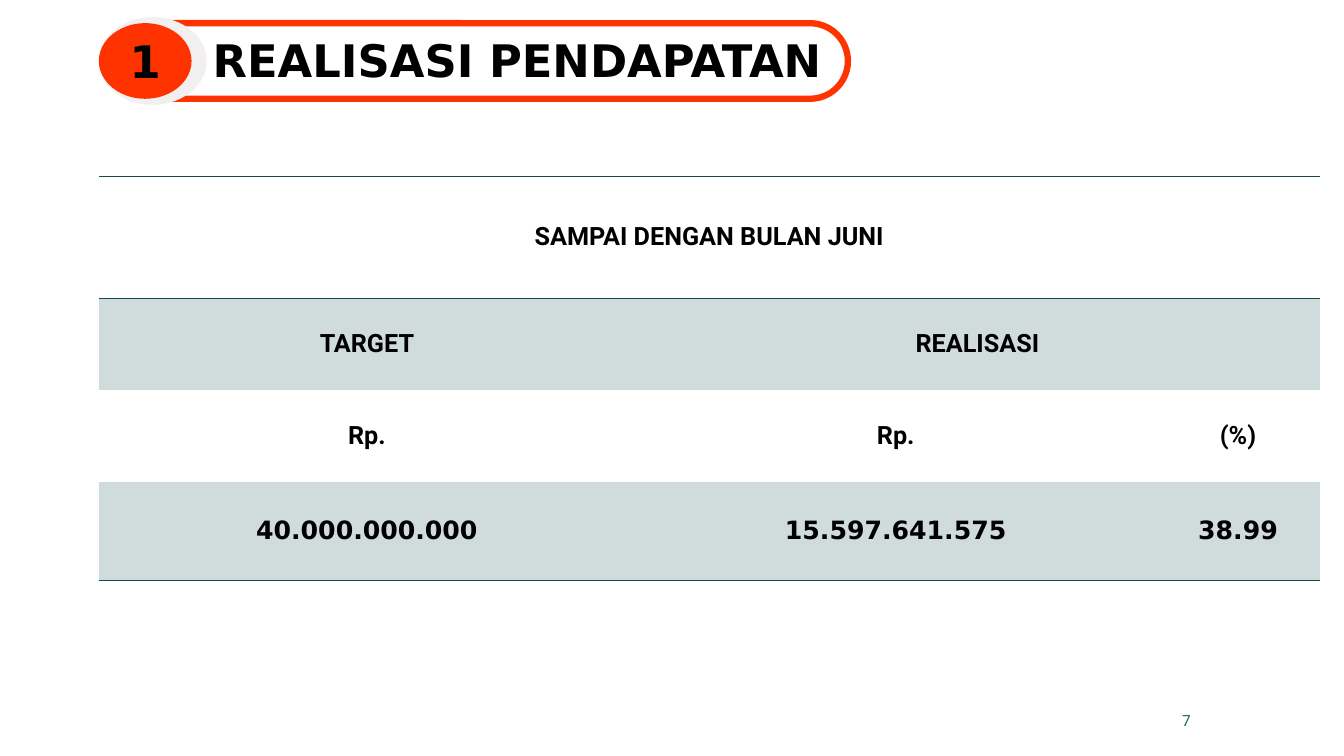
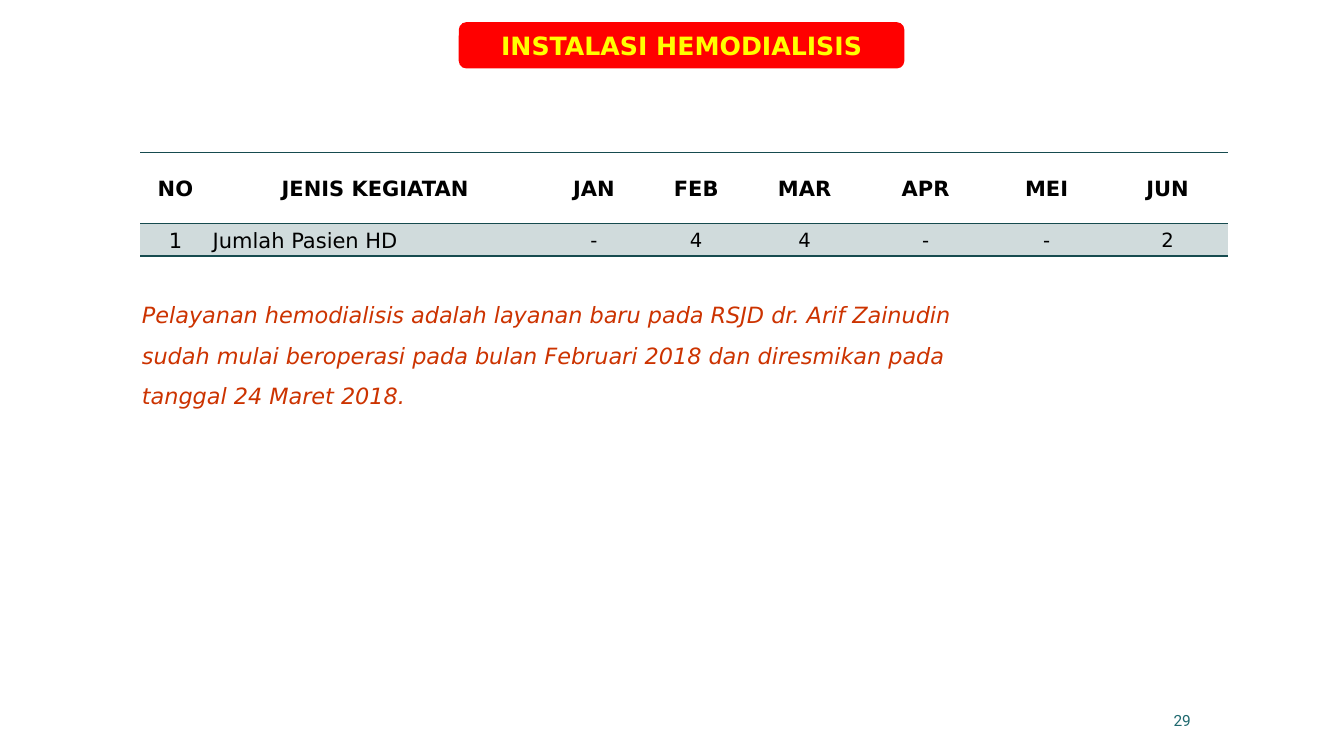
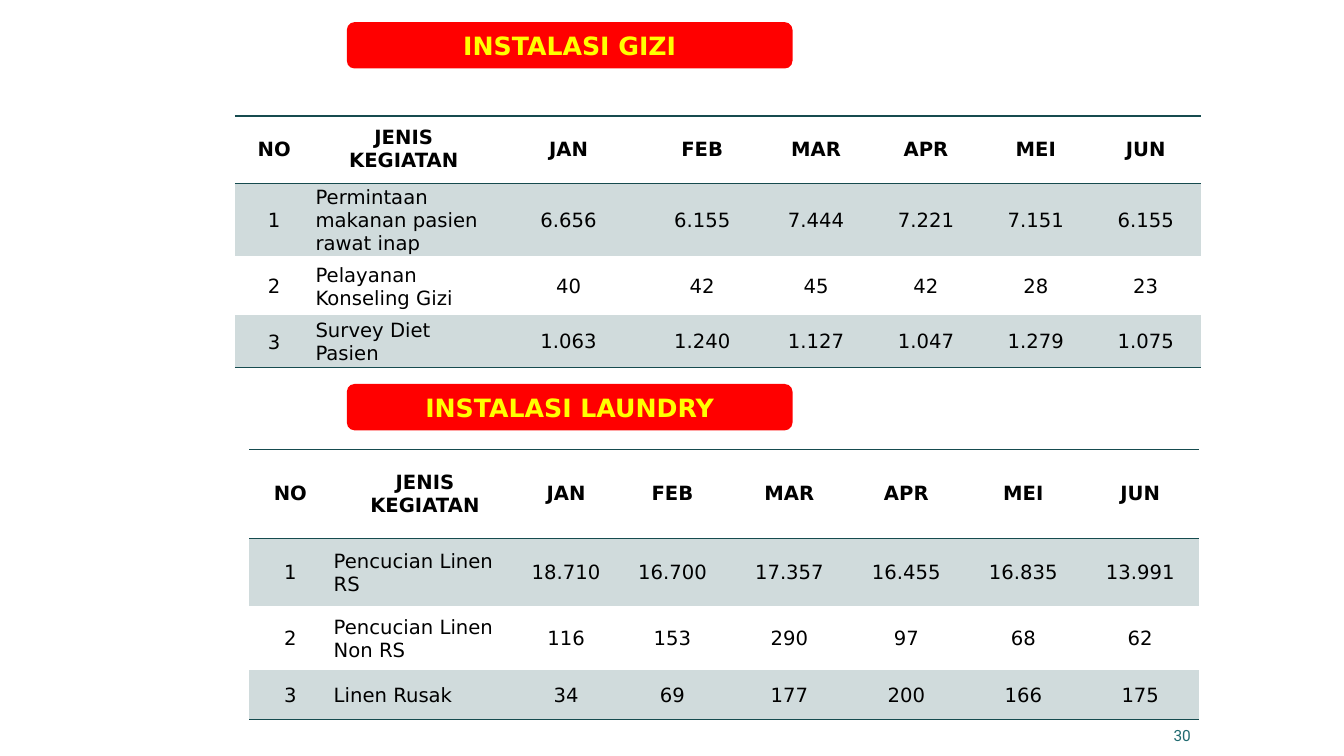
from lxml import etree
from pptx import Presentation
from pptx.dml.color import RGBColor
from pptx.enum.shapes import MSO_SHAPE
from pptx.enum.text import MSO_ANCHOR, MSO_AUTO_SIZE, PP_ALIGN
from pptx.oxml.ns import qn
from pptx.util import Inches, Pt

LEFT, CENTER, RIGHT = PP_ALIGN.LEFT, PP_ALIGN.CENTER, PP_ALIGN.RIGHT
MIDDLE, BOTTOM = MSO_ANCHOR.MIDDLE, MSO_ANCHOR.BOTTOM
ROUNDED, OVAL = MSO_SHAPE.ROUNDED_RECTANGLE, MSO_SHAPE.OVAL
TITLE_ONLY, BLANK = 5, 6

HEADING_FONT, BODY_FONT = "DejaVu Sans", "Roboto"
BLACK, TEAL, BAND, PAGE_TEAL = "000000", "164B4F", "D0DBDC", "1F696F"
ORANGE, PALE, RED, YELLOW, RUST = "FF3300", "F1EFF0", "FF0000", "FFFF00", "CC3300"
PLAIN_STYLE = "{2D5ABB26-0587-4C30-8999-92F81FD0307C}"

HEADERS = ["NO", "JENIS KEGIATAN", "JAN", "FEB", "MAR", "APR", "MEI", "JUN"]


def rgb(hex_color):
    return RGBColor.from_string(hex_color)


def box(left, top, width, height):
    return [Inches(length) for length in (left, top, width, height)]


def style_text(frame, size, color=BLACK, font=HEADING_FONT, align=CENTER,
               bold=False, italic=False, spacing=None):
    for paragraph in frame.paragraphs:
        paragraph.alignment = align
        if spacing:
            paragraph.line_spacing = spacing
        for run in paragraph.runs:
            run.font.name = font
            run.font.size = Pt(size)
            run.font.bold = bold
            run.font.italic = italic
            run.font.color.rgb = rgb(color)


def add_panel(shapes, kind, area, fill=None, outline=None):
    panel = shapes.add_shape(kind, *box(*area))
    panel.shadow.inherit = False
    if fill:
        panel.fill.solid()
        panel.fill.fore_color.rgb = rgb(fill)
    else:
        panel.fill.background()
    if outline:
        panel.line.color.rgb = rgb(outline)
        panel.line.width = Pt(4.5)
    else:
        panel.line.fill.background()
    return panel


def add_page_number(slide, number, top=6.95):
    frame = slide.shapes.add_textbox(*box(8.8, top, 3.11, 0.4)).text_frame
    frame.word_wrap = True
    frame.vertical_anchor = MIDDLE
    frame.text = str(number)
    style_text(frame, 11, PAGE_TEAL, BODY_FONT, RIGHT)


def add_section_label(slide, left, top, label):
    frame = add_panel(slide.shapes, ROUNDED, (left, top, 4.42, 0.46), RED).text_frame
    frame.vertical_anchor = MIDDLE
    frame.text = label
    style_text(frame, 18, YELLOW, bold=True)


def add_numbered_title(slide, left, top, number, title):
    group = slide.shapes.add_group_shape()
    pill = add_panel(group.shapes, ROUNDED, (left + 0.12, top + 0.06, 7.31, 0.75),
                     outline=ORANGE)
    pill.adjustments[0] = 0.5
    add_panel(group.shapes, OVAL, (left, top, 1.07, 0.87), PALE)
    badge = add_panel(group.shapes, OVAL, (left, top + 0.06, 0.92, 0.75), ORANGE)
    badge.text_frame.vertical_anchor = MIDDLE
    badge.text_frame.text = number
    style_text(badge.text_frame, 32, bold=True)

    heading = slide.shapes.title
    heading.left, heading.top, heading.width, heading.height = box(
        left - 0.15, top, 8.6, 0.75)
    frame = heading.text_frame
    frame.auto_size = MSO_AUTO_SIZE.NONE
    frame.vertical_anchor = BOTTOM
    frame.text = title
    style_text(frame, 32, bold=True, spacing=0.9)


def add_rule(cell, side):
    """Draw a thin teal line on one side of the cell: "lnT" or "lnB"."""
    rule = etree.Element(qn("a:" + side), w=str(Pt(1)))
    fill = etree.SubElement(rule, qn("a:solidFill"))
    etree.SubElement(fill, qn("a:srgbClr"), val=TEAL)
    cell._tc.get_or_add_tcPr().insert(0, rule)


def add_banded_table(slide, left, top, widths, heights):
    """Table with ruled header, shaded odd body rows and a closing rule."""
    table = slide.shapes.add_table(
        len(heights), len(widths),
        *box(left, top, sum(widths), sum(heights))).table
    table._tbl.tblPr.find(qn("a:tableStyleId")).text = PLAIN_STYLE
    table.first_row = table.horz_banding = False
    for column, width in zip(table.columns, widths):
        column.width = Inches(width)
    for index, (row, height) in enumerate(zip(table.rows, heights)):
        row.height = Inches(height)
        for cell in row.cells:
            if index % 2:
                cell.fill.solid()
                cell.fill.fore_color.rgb = rgb(BAND)
            else:
                cell.fill.background()
            if index in (0, len(heights) - 1):
                add_rule(cell, "lnB")
            if index == 0:
                add_rule(cell, "lnT")
    return table


def fill_cell(cell, text, margins, size, **style):
    cell.margin_left = cell.margin_right = Inches(margins[0])
    cell.margin_top, cell.margin_bottom = Inches(margins[1]), Inches(margins[2])
    cell.vertical_anchor = MIDDLE
    cell.text = text
    style_text(cell.text_frame, size, **style)


def add_activity_table(slide, left, top, widths, heights, activities,
                       header_margins, label_size=14):
    table = add_banded_table(slide, left, top, widths, heights)
    for cell, header in zip(table.rows[0].cells, HEADERS):
        fill_cell(cell, header, header_margins, label_size, bold=True)
    for number, activity in enumerate(activities, 1):
        for column, text in enumerate([str(number), *activity]):
            is_label = column < 2
            fill_cell(table.cell(number, column), text,
                      (0.02, 0.02, 0) if is_label else (0.01, 0.01, 0),
                      label_size if is_label else 14,
                      align=LEFT if column == 1 else CENTER)


def add_income_table(slide, left, top):
    table = add_banded_table(slide, left, top, [5.32, 5.17, 1.62],
                             [1.21, 0.91, 0.91, 0.98])
    table.cell(0, 0).merge(table.cell(0, 2))
    table.cell(1, 1).merge(table.cell(1, 2))
    rows = [
        ["SAMPAI DENGAN BULAN JUNI"],
        ["TARGET", "REALISASI"],
        ["Rp.", "Rp.", "(%)"],
        ["40.000.000.000", "15.597.641.575", "38.99"],
    ]
    for index, row in enumerate(rows):
        is_amount = index == len(rows) - 1
        for column, text in enumerate(row):
            margins = (0, 0, 0) if is_amount and column else (0.2, 0.08, 0.08)
            fill_cell(table.cell(index, column), text, margins, 18, bold=True,
                      font=HEADING_FONT if is_amount else BODY_FONT)


def add_note(slide, left, top, lines):
    frame = slide.shapes.add_textbox(*box(left, top, 8.5, 1.31)).text_frame
    frame.word_wrap = True
    frame.text = "\n".join(lines)
    style_text(frame, 16, RUST, align=LEFT, italic=True, spacing=1.5)


def new_slide(prs, layout):
    return prs.slides.add_slide(prs.slide_layouts[layout])


def build_income_slide(prs):
    slide = new_slide(prs, TITLE_ONLY)
    add_numbered_title(slide, 0.98, 0.17, "1", "REALISASI PENDAPATAN")
    add_income_table(slide, 0.98, 1.75)
    add_page_number(slide, 7)


def build_hemodialysis_slide(prs):
    slide = new_slide(prs, BLANK)
    add_section_label(slide, 4.55, 0.22, "INSTALASI HEMODIALISIS")
    add_activity_table(
        slide, 1.39, 1.51, [0.7, 3.26, 1.08, 0.95] + [1.2] * 4, [0.71, 0.32],
        [["Jumlah Pasien HD", "-", "4", "4", "-", "-", "2"]],
        (0.02, 0.02, 0), label_size=15)
    add_note(slide, 1.31, 2.81, [
        "Pelayanan hemodialisis adalah layanan baru pada RSJD dr. Arif Zainudin",
        "sudah mulai beroperasi pada bulan Februari 2018 dan diresmikan pada "
        "tanggal 24 Maret 2018.",
    ])
    add_page_number(slide, 29)


def build_nutrition_laundry_slide(prs):
    slide = new_slide(prs, BLANK)
    add_section_label(slide, 3.44, 0.22, "INSTALASI GIZI")
    add_activity_table(
        slide, 2.33, 1.15, [0.78, 1.79, 1.48, 1.17] + [1.09] * 4,
        [0.67, 0.55, 0.59, 0.52],
        [["Permintaan makanan pasien rawat inap",
          "6.656", "6.155", "7.444", "7.221", "7.151", "6.155"],
         ["Pelayanan Konseling Gizi", "40", "42", "45", "42", "28", "23"],
         ["Survey Diet Pasien",
          "1.063", "1.240", "1.127", "1.047", "1.279", "1.075"]],
        (0.2, 0.08, 0.08))
    add_section_label(slide, 3.44, 3.81, "INSTALASI LAUNDRY")
    add_activity_table(
        slide, 2.47, 4.46, [0.82, 1.85, 0.95] + [1.16] * 5,
        [0.88, 0.67, 0.64, 0.49],
        [["Pencucian Linen RS",
          "18.710", "16.700", "17.357", "16.455", "16.835", "13.991"],
         ["Pencucian Linen Non RS", "116", "153", "290", "97", "68", "62"],
         ["Linen Rusak", "34", "69", "177", "200", "166", "175"]],
        (0.2, 0.07, 0.07))
    # The laundry table reaches 7.14 inches, so the number sits just below it.
    add_page_number(slide, 30, top=7.1)


def main():
    prs = Presentation()
    prs.slide_width, prs.slide_height = Inches(13.33), Inches(7.5)
    build_income_slide(prs)
    build_hemodialysis_slide(prs)
    build_nutrition_laundry_slide(prs)
    prs.save("out.pptx")


if __name__ == "__main__":
    main()
